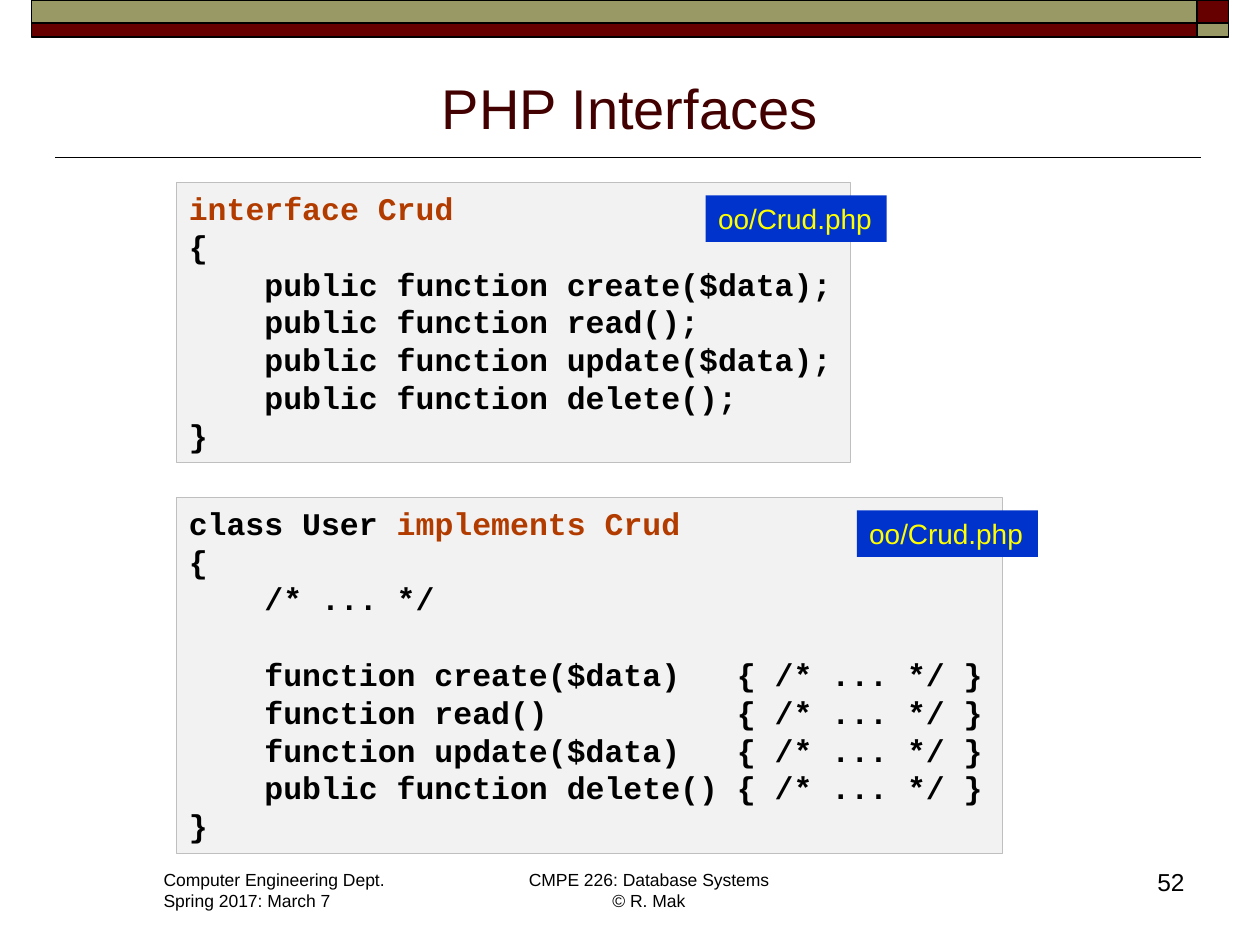
from lxml.etree import SubElement
from pptx import Presentation
from pptx.dml.color import RGBColor
from pptx.enum.shapes import MSO_CONNECTOR, MSO_SHAPE
from pptx.enum.text import MSO_ANCHOR, MSO_AUTO_SIZE, PP_ALIGN
from pptx.oxml.ns import qn
from pptx.util import Pt

COLORS = {
    "black": "000000", "maroon": "660000", "olive": "999966",
    "title": "420000", "panel": "F2F2F2", "panel_edge": "BFBFBF",
    "keyword": "B23C00", "label": "0033CC", "label_text": "FFFF00",
}


class SlideBuilder:
    def __init__(self, slide, body_font="Arial", code_font="Courier New"):
        self.slide = slide
        self.body_font = body_font
        self.code_font = code_font

    def color(self, name):
        return RGBColor.from_string(COLORS[name])

    def style(self, paragraph, font, size, color, bold=False):
        for run in paragraph.runs:
            run.font.name = font
            run.font.size = Pt(size)
            run.font.bold = bold
            run.font.color.rgb = self.color(color)

    def title(self, text, left, top, width, height):
        title = self.slide.shapes.title
        title.left, title.top = Pt(left), Pt(top)
        title.width, title.height = Pt(width), Pt(height)
        frame = title.text_frame
        frame.text = text
        frame.auto_size = MSO_AUTO_SIZE.NONE
        frame.vertical_anchor = MSO_ANCHOR.BOTTOM
        frame.paragraphs[0].alignment = PP_ALIGN.CENTER
        self.style(frame.paragraphs[0], self.body_font, 32, "title")

    def rect(self, left, top, width, height, fill, edge=None, weight=1):
        rect = self.slide.shapes.add_shape(
            MSO_SHAPE.RECTANGLE, Pt(left), Pt(top), Pt(width), Pt(height))
        rect.shadow.inherit = False
        rect.fill.solid()
        rect.fill.fore_color.rgb = self.color(fill)
        if edge:
            rect.line.color.rgb = self.color(edge)
            rect.line.width = Pt(weight)
        else:
            rect.line.fill.background()
        return rect

    def rule(self, left, right, y):
        rule = self.slide.shapes.add_connector(
            MSO_CONNECTOR.STRAIGHT, Pt(left), Pt(y), Pt(right), Pt(y))
        rule.line.color.rgb = self.color("black")
        rule.line.width = Pt(1)
        SubElement(rule._element.spPr, qn("a:effectLst"))

    def text(self, text, left, top, width, height, size,
             align=PP_ALIGN.LEFT, wrap=False):
        box = self.slide.shapes.add_textbox(
            Pt(left), Pt(top), Pt(width), Pt(height))
        frame = box.text_frame
        frame.word_wrap = wrap
        frame.text = text
        for paragraph in frame.paragraphs:
            paragraph.alignment = align
            self.style(paragraph, self.body_font, size, "black")

    def fit(self, shape):
        frame = shape.text_frame
        frame.word_wrap = False
        frame.auto_size = MSO_AUTO_SIZE.SHAPE_TO_FIT_TEXT
        frame.vertical_anchor = MSO_ANCHOR.TOP
        return frame

    def code(self, source, keyword, left, top, width, height):
        """Code panel with one phrase picked out in the keyword color."""
        panel = self.rect(left, top, width, height, "panel", "panel_edge", 0.75)
        frame = self.fit(panel)
        frame.text = source
        for paragraph in frame.paragraphs:
            paragraph.alignment = PP_ALIGN.LEFT
            before, found, after = paragraph.text.partition(keyword)
            if found:
                paragraph.clear()
                for part in filter(None, (before, found, after)):
                    paragraph.add_run().text = part
            self.style(paragraph, self.code_font, 18, "black", bold=True)
            for run in paragraph.runs:
                if run.text == keyword:
                    run.font.color.rgb = self.color("keyword")

    def file_label(self, text, left, top):
        frame = self.fit(self.rect(left, top, 103.5, 26.64, "label"))
        frame.text = text
        frame.paragraphs[0].alignment = PP_ALIGN.LEFT
        self.style(frame.paragraphs[0], self.body_font, 16, "label_text")


INTERFACE_CODE = """interface Crud
{
    public function create($data);
    public function read();
    public function update($data);
    public function delete();
}"""

CLASS_CODE = """class User implements Crud
{
    /* ... */
    
    function create($data)   { /* ... */ }
    function read()          { /* ... */ }
    function update($data)   { /* ... */ }
    public function delete() { /* ... */ }
}"""


def main():
    deck = Presentation()
    deck.slide_width, deck.slide_height = Pt(720), Pt(540)
    page = SlideBuilder(deck.slides.add_slide(deck.slide_layouts[5]))

    # Top band: two rows with the colors swapped in the corner
    page.rule(31.7, 686.2, 90)
    for top, height, bar, corner in ((0, 13, "olive", "maroon"),
                                     (13, 8, "maroon", "olive")):
        page.rect(18, top, 666, height, bar, "black")
        page.rect(684, top, 18, height, corner, "black")

    # Title
    page.title("PHP Interfaces", 36, 32.4, 648, 51.84)

    # Footer
    page.text("Computer Engineering Dept.\nSpring 2017: March 7",
              86.4, 493.2, 142.5, 31.7, 10)
    page.text("CMPE 226: Database Systems\v© R. Mak",
              293.8, 493.2, 154, 31.7, 10, PP_ALIGN.CENTER)
    page.text("52", 534, 492, 150, 36, 14, PP_ALIGN.RIGHT, wrap=True)

    # Code panels
    page.code(INTERFACE_CODE, "interface Crud", 100.8, 104.4, 385.2, 159.84)
    page.code(CLASS_CODE, "implements Crud", 100.8, 284.4, 472.3, 203.4)

    # File labels
    page.file_label("oo/Crud.php", 403.2, 111.6)
    page.file_label("oo/Crud.php", 489.6, 291.6)

    deck.save("out.pptx")


if __name__ == "__main__":
    main()
